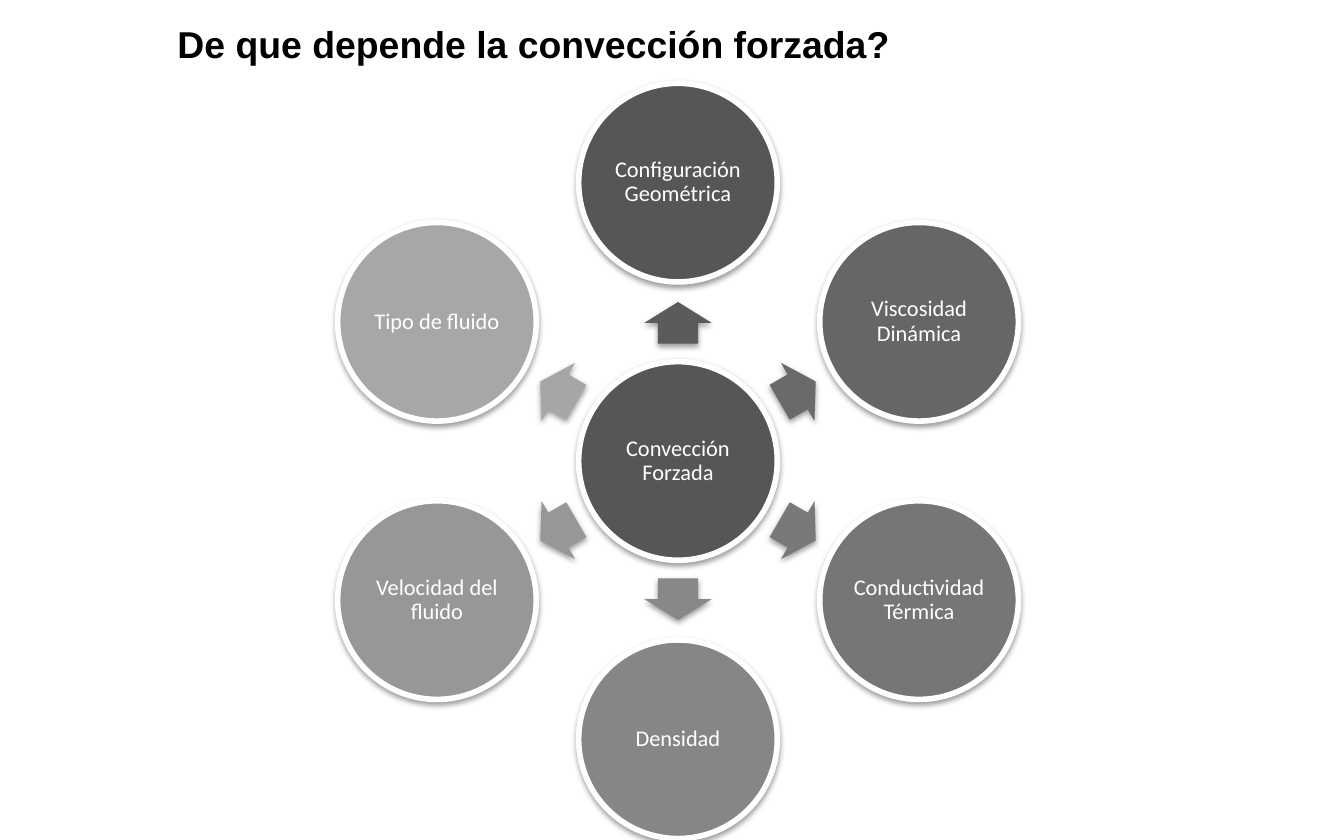
from dataclasses import dataclass
from math import cos, radians, sin

from lxml.etree import SubElement as Sub
from pptx import Presentation
from pptx.dml.color import RGBColor as RGB
from pptx.enum.shapes import MSO_SHAPE as Shape
from pptx.enum.text import MSO_ANCHOR as Anchor, MSO_AUTO_SIZE as Fit, PP_ALIGN as Align
from pptx.oxml.ns import qn
from pptx.util import Inches, Pt


@dataclass(frozen=True)
class Theme:
    """Colours, fonts and type sizes of the slide."""
    ink: str = "000000"
    paper: str = "FFFFFF"
    hub: str = "565656"
    title_font: str = "Arial"
    label_font: str = "Calibri"
    title_size: int = 20
    label_size: int = 12
    rim: int = 3


THEME = Theme()
WIDTH, HEIGHT = 10, 6.25
TITLE_BOX = (1.22, 0.11, 6.69, 0.44)
WHEEL_BOX = (2.51, 0.62, 5.07, 5.62)
DISC_SHARE, ARROW_SHARE = 0.263, 0.183
ARROW_LENGTH, ARROW_WIDTH = 0.31, 0.5
HUB = "Convección Forzada"
FACTORS = [
    ("Configuración Geométrica", "565656", "5B5B5B"),
    ("Viscosidad Dinámica", "666666", "6A6A6A"),
    ("Conductividad Térmica", "767676", "797979"),
    ("Densidad", "868686", "888888"),
    ("Velocidad del fluido", "979797", "979797"),
    ("Tipo de fluido", "A7A7A7", "A6A6A6"),
]


def apply(target, **values):
    """Set each given value as an attribute of the target."""
    for name, value in values.items():
        setattr(target, name, value)


def style_text(tf, text, align, font, size, color, bold=False):
    """Write one formatted paragraph into a text frame."""
    p = tf.paragraphs[0]
    p.alignment = align
    r = p.add_run()
    r.text = text
    apply(r.font, name=font, size=Pt(size), bold=bold)
    r.font.color.rgb = RGB.from_string(color)
    return p


def add_shadow(sp):
    """Give a shape a soft shadow falling straight down."""
    sp.shadow.inherit = False
    effects = sp._element.spPr.find(qn("a:effectLst"))
    shadow = Sub(effects, qn("a:outerShdw"), blurRad=str(Pt(3.1)), dist=str(Pt(1.6)),
                 dir="5400000", rotWithShape="0")
    color = Sub(shadow, qn("a:srgbClr"), val=THEME.ink)
    Sub(color, qn("a:alpha"), val="38000")


def add_centred(shapes, kind, cx, cy, w, h, fill):
    """Add a filled, shadowed shape around a centre point."""
    sp = shapes.add_shape(kind, *map(Inches, (cx - w / 2, cy - h / 2, w, h)))
    sp.fill.solid()
    sp.fill.fore_color.rgb = RGB.from_string(fill)
    add_shadow(sp)
    return sp


def add_disc(shapes, cx, cy, size, text, fill):
    """Add a white-rimmed circle with its label."""
    sp = add_centred(shapes, Shape.OVAL, cx, cy, size, size, fill)
    sp.line.color.rgb = RGB.from_string(THEME.paper)
    sp.line.width = Pt(THEME.rim)
    tf = sp.text_frame
    margins = dict.fromkeys(("margin_left", "margin_top", "margin_right", "margin_bottom"), Inches(0.02))
    apply(tf, word_wrap=True, vertical_anchor=Anchor.MIDDLE, **margins)
    p = style_text(tf, text, Align.CENTER, THEME.label_font, THEME.label_size, THEME.paper)
    p.line_spacing = 0.9


def add_arrow(shapes, cx, cy, angle, fill):
    """Add a block arrow pointing outward at the given angle."""
    sp = add_centred(shapes, Shape.RIGHT_ARROW, cx, cy, ARROW_LENGTH, ARROW_WIDTH, fill)
    sp.adjustments[0], sp.adjustments[1] = 0.6, 0.5
    sp.line.fill.background()
    sp.rotation = angle % 360


def add_title(slide, box):
    """Place the title in the given box."""
    title = slide.shapes.title
    apply(title, **dict(zip(("left", "top", "width", "height"), map(Inches, box))))
    tf = title.text_frame
    apply(tf, word_wrap=True, vertical_anchor=Anchor.TOP, auto_size=Fit.SHAPE_TO_FIT_TEXT)
    style_text(tf, "De que depende la convección forzada?", Align.JUSTIFY,
               THEME.title_font, THEME.title_size, THEME.ink, True)


def add_wheel(slide, box):
    """Draw the hub with its factors spread evenly around it."""
    left, top, width, height = box
    cx, cy = left + width / 2, top + height / 2
    disc = height * DISC_SHARE
    orbit, arrow_orbit = (height - disc) / 2, height * ARROW_SHARE
    shapes = slide.shapes.add_group_shape().shapes
    add_disc(shapes, cx, cy, disc, HUB, THEME.hub)
    for i, (text, fill, arrow_fill) in enumerate(FACTORS):
        angle = 360 * i / len(FACTORS) - 90
        dx, dy = cos(radians(angle)), sin(radians(angle))
        add_arrow(shapes, cx + arrow_orbit * dx, cy + arrow_orbit * dy, angle, arrow_fill)
        add_disc(shapes, cx + orbit * dx, cy + orbit * dy, disc, text, fill)


def main():
    """Build and save the slide."""
    prs = Presentation()
    apply(prs, slide_width=Inches(WIDTH), slide_height=Inches(HEIGHT))
    slide = prs.slides.add_slide(prs.slide_layouts[5])
    add_title(slide, TITLE_BOX)
    add_wheel(slide, WHEEL_BOX)
    prs.save("out.pptx")


if __name__ == "__main__":
    main()
